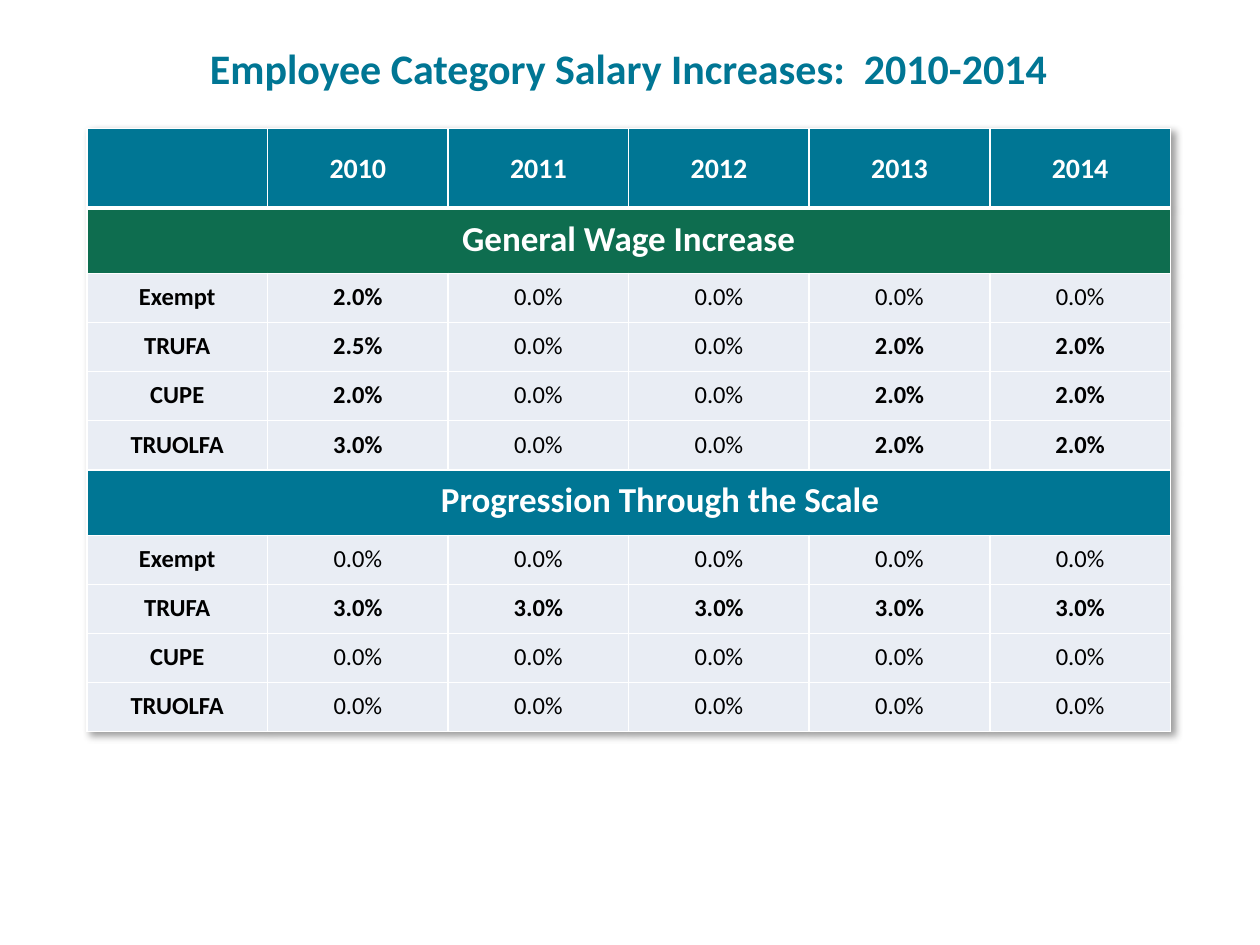
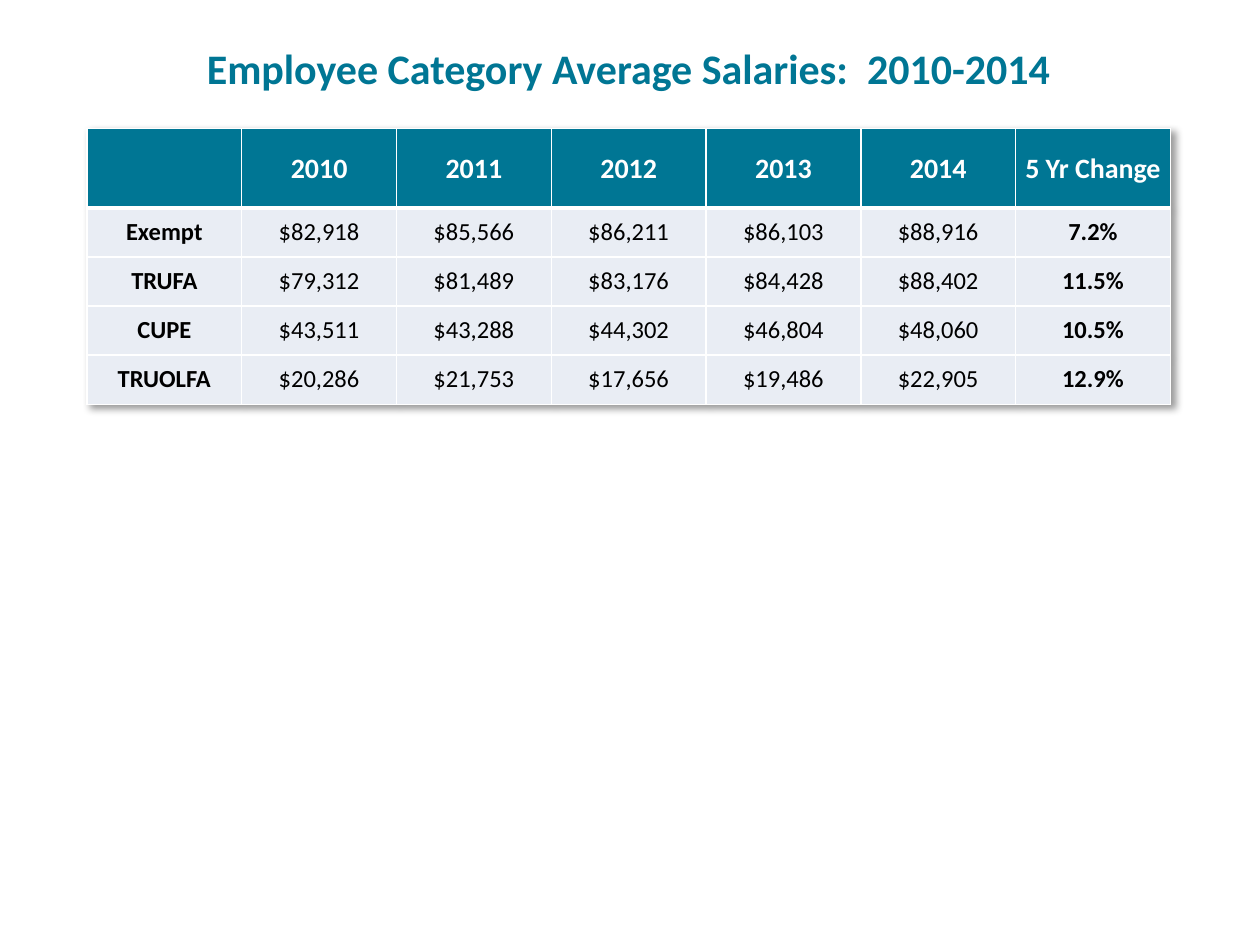
"""Build two slides of salary tables by employee category."""
from lxml import etree
from pptx import Presentation
from pptx import util as u
from pptx.dml.color import RGBColor
from pptx.enum import text
from pptx.oxml import parse_xml

COLORS = {"teal": "007694", "green": "0E6D4F", "pale": "E9EDF4", "white": "FFFFFF", "black": "000000"}
FONT = "Calibri"
LEFT, WIDTH = u.Inches(0.69), u.Inches(8.6)
HEADER_HEIGHT, SECTION_HEIGHT, ROW_HEIGHT = u.Inches(0.63), u.Inches(0.52), u.Inches(0.39)
DRAWING = "http://schemas.openxmlformats.org/drawingml/2006/main"
SHADOW = (f'<a:effectLst xmlns:a="{DRAWING}"><a:outerShdw blurRad="50800" dist="38100" dir="2700000" '
          'algn="tl" rotWithShape="0"><a:srgbClr val="000000"><a:alpha val="40000"/></a:srgbClr>'
          '</a:outerShdw></a:effectLst>')

YEARS = ["2010", "2011", "2012", "2013", "2014"]
SECTIONS = {
    "General Wage Increase": ("green", 0.8, 0),
    "Progression Through the Scale": ("teal", 0.7, 0.5),
}
SLIDES = [
    ("Employee Category Salary Increases:  2010-2014", [
        ["", *YEARS],
        ["General Wage Increase"],
        ["Exempt", "2.0%", "0.0%", "0.0%", "0.0%", "0.0%"],
        ["TRUFA", "2.5%", "0.0%", "0.0%", "2.0%", "2.0%"],
        ["CUPE", "2.0%", "0.0%", "0.0%", "2.0%", "2.0%"],
        ["TRUOLFA", "3.0%", "0.0%", "0.0%", "2.0%", "2.0%"],
        ["Progression Through the Scale"],
        ["Exempt"] + ["0.0%"] * 5,
        ["TRUFA"] + ["3.0%"] * 5,
        ["CUPE"] + ["0.0%"] * 5,
        ["TRUOLFA"] + ["0.0%"] * 5,
    ]),
    ("Employee Category Average Salaries:  2010-2014", [
        ["", *YEARS, "5 Yr Change"],
        ["Exempt", "$82,918", "$85,566", "$86,211", "$86,103", "$88,916", "7.2%"],
        ["TRUFA", "$79,312", "$81,489", "$83,176", "$84,428", "$88,402", "11.5%"],
        ["CUPE", "$43,511", "$43,288", "$44,302", "$46,804", "$48,060", "10.5%"],
        ["TRUOLFA", "$20,286", "$21,753", "$17,656", "$19,486", "$22,905", "12.9%"],
    ]),
]


def write(paragraph, words, size, color, bold=True):
    paragraph.text = words
    paragraph.alignment = text.PP_ALIGN.CENTER
    paragraph.font.name = FONT
    paragraph.font.size = u.Pt(size)
    paragraph.font.bold = bold
    paragraph.font.color.rgb = RGBColor.from_string(COLORS[color])


def style_cell(cell, fill, top, bottom):
    cell.fill.solid()
    cell.fill.fore_color.rgb = RGBColor.from_string(COLORS[fill])
    cell.vertical_anchor = text.MSO_ANCHOR.MIDDLE
    cell.margin_left = cell.margin_right = cell.margin_top = u.Inches(0.01)
    cell.margin_bottom = 0
    properties = cell._tc.get_or_add_tcPr()
    for index, (side, points) in enumerate([("L", 1), ("R", 1), ("T", top), ("B", bottom)]):
        line = etree.Element(f"{{{DRAWING}}}ln{side}", w=str(u.Pt(points)))
        solid = etree.SubElement(line, f"{{{DRAWING}}}solidFill")
        etree.SubElement(solid, f"{{{DRAWING}}}srgbClr", val=COLORS["white"])
        properties.insert(index, line)


deck = Presentation()
deck.slide_width, deck.slide_height = u.Inches(10), u.Inches(7.5)

for title, rows in SLIDES:
    page = deck.slides.add_slide(deck.slide_layouts[6])
    box = page.shapes.add_textbox(LEFT, u.Inches(0.29), WIDTH, u.Inches(0.5))
    box.text_frame.word_wrap = True
    box.text_frame.auto_size = text.MSO_AUTO_SIZE.SHAPE_TO_FIT_TEXT
    write(box.text_frame.paragraphs[0], title, 24, "teal")
    box.text_frame.paragraphs[0].space_after = u.Pt(6)

    heights = [HEADER_HEIGHT] + [SECTION_HEIGHT if len(row) == 1 else ROW_HEIGHT for row in rows[1:]]
    columns = len(rows[0])
    table = page.shapes.add_table(len(rows), columns, LEFT, u.Inches(1.02), WIDTH, sum(heights)).table
    table.horz_banding = False
    table._tbl.tblPr.insert(0, parse_xml(SHADOW))

    for row_index, row in enumerate(rows):
        table.rows[row_index].height = heights[row_index]
        is_header = row_index == 0
        is_section = len(row) == 1
        fill = "teal" if is_header else SECTIONS[row[0]][0] if is_section else "pale"
        for column in range(columns):
            style_cell(table.cell(row_index, column), fill,
                       top=3 if row_index == 1 else 1, bottom=3 if is_header else 1)
        if is_section:
            table.cell(row_index, 0).merge(table.cell(row_index, columns - 1))
        for column, words in enumerate(row):
            paragraph = table.cell(row_index, column).text_frame.paragraphs[0]
            if is_header:
                write(paragraph, words, 16, "white")
            elif is_section:
                _, spacing, indent = SECTIONS[words]
                write(paragraph, words, 20, "white")
                paragraph.line_spacing = spacing
                paragraph._p.get_or_add_pPr().set("marL", str(u.Inches(indent)))
            else:
                is_raise = words.endswith("%") and words != "0.0%"
                write(paragraph, words, 14, "black", bold=column == 0 or is_raise)
                paragraph.line_spacing = 0.8

deck.save("out.pptx")
